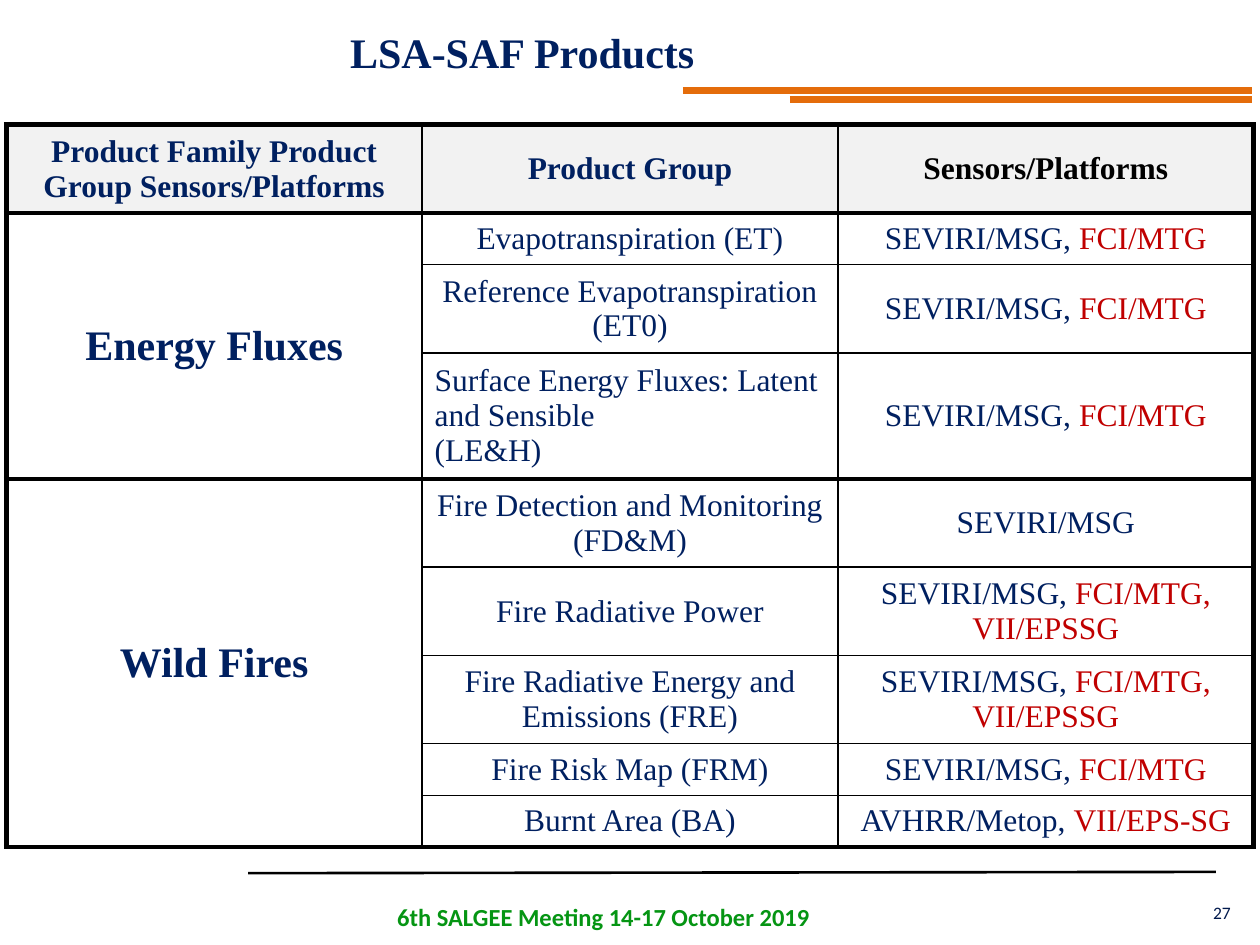
"""Build the LSA-SAF products slide with its product table."""
from lxml import etree
from pptx import Presentation
from pptx.dml.color import RGBColor
from pptx.enum.shapes import MSO_CONNECTOR
from pptx.enum.text import MSO_ANCHOR, PP_ALIGN
from pptx.oxml.ns import qn
from pptx.util import Inches, Pt

LEFT, CENTER = PP_ALIGN.LEFT, PP_ALIGN.CENTER
MIDDLE, TOP = MSO_ANCHOR.MIDDLE, MSO_ANCHOR.TOP
STRAIGHT = MSO_CONNECTOR.STRAIGHT

NAVY = RGBColor(0x00, 0x20, 0x60)
INK = RGBColor(0x00, 0x19, 0x4C)
RED = RGBColor(0xC0, 0x00, 0x00)
GREEN = RGBColor(0x05, 0x95, 0x13)
ORANGE = RGBColor(0xE4, 0x6C, 0x0A)
BLACK = RGBColor(0x00, 0x00, 0x00)
WHITE = RGBColor(0xFF, 0xFF, 0xFF)
GREY = RGBColor(0xF2, 0xF2, 0xF2)

SERIF, SANS = "Times New Roman", "Calibri"
BODY = {"name": SERIF, "size": Pt(18), "bold": False}
HEAD = {**BODY, "bold": True}
BIG = {**HEAD, "size": Pt(24)}
FOOTER = {"name": SANS, "size": Pt(14), "bold": True}
NUMBER = {"name": SANS, "size": Pt(10), "bold": False}

HEADERS = [
    ("Product Family Product Group Sensors/Platforms", NAVY),
    ("Product Group", NAVY),
    ("Sensors/Platforms", BLACK),
]
FAMILIES = {
    "Energy Fluxes": [
        (["Evapotranspiration (ET)"], "SEVIRI/MSG, ", "FCI/MTG"),
        (["Reference Evapotranspiration (ET0)"], "SEVIRI/MSG, ", "FCI/MTG"),
        (["Surface Energy Fluxes: Latent and Sensible", "(LE&H)"],
         "SEVIRI/MSG, ", "FCI/MTG"),
    ],
    "Wild Fires": [
        (["Fire Detection and Monitoring (FD&M)"], "SEVIRI/MSG", ""),
        (["Fire Radiative Power"], "SEVIRI/MSG, ", "FCI/MTG, VII/EPSSG"),
        (["Fire Radiative Energy and Emissions (FRE)"],
         "SEVIRI/MSG, ", "FCI/MTG, VII/EPSSG"),
        (["Fire Risk Map (FRM)"], "SEVIRI/MSG, ", "FCI/MTG"),
        (["Burnt Area (BA)"], "AVHRR/Metop, ", "VII/EPS-SG"),
    ],
}
ROW_HEIGHTS = [0.7, 0.41, 0.7, 1, 0.7, 0.7, 0.7, 0.41, 0.41]
COL_WIDTH = 3.3
THICK, THIN = 3, 1


def write(tf, paragraphs, style, align=CENTER):
    """Fill a text frame with paragraphs of (text, colour) runs."""
    for i, runs in enumerate(paragraphs):
        p = tf.add_paragraph() if i else tf.paragraphs[0]
        p.alignment = align
        for text, color in runs:
            r = p.add_run()
            r.text = text
            for key, value in style.items():
                setattr(r.font, key, value)
            r.font.color.rgb = color


def add_line(s, start, end, color, width):
    """Draw a straight line without a shadow."""
    sp = s.shapes.add_connector(STRAIGHT, *map(Inches, start + end))
    sp.line.color.rgb = color
    sp.line.width = Pt(width)
    etree.SubElement(sp._element.spPr, qn("a:effectLst"))


def add_text(s, box, text, style, color, align=CENTER, wrap=True):
    """Add a one-paragraph text box."""
    tf = s.shapes.add_textbox(*map(Inches, box)).text_frame
    tf.word_wrap = wrap
    write(tf, [[(text, color)]], style, align)


def set_title(s, box, text):
    """Place and format the title placeholder."""
    sp = s.shapes.title
    sp.left, sp.top, sp.width, sp.height = map(Inches, box)
    sp.text_frame.vertical_anchor = TOP
    write(sp.text_frame, [[(text, NAVY)]], BIG)


def set_borders(cell, widths):
    """Give a cell black left, right, top and bottom borders."""
    tcPr = cell._tc.get_or_add_tcPr()
    for i, (side, width) in enumerate(zip("LRTB", widths)):
        ln = etree.Element(qn(f"a:ln{side}"), w=str(Pt(width)))
        fill = etree.SubElement(ln, qn("a:solidFill"))
        etree.SubElement(fill, qn("a:srgbClr"), val=str(BLACK))
        tcPr.insert(i, ln)


def style_cells(table, starts):
    """Set fills and borders, thick around the table and each band."""
    last = len(table.columns) - 1
    for row in range(len(table.rows)):
        for col in range(last + 1):
            cell = table.cell(row, col)
            cell.vertical_anchor = MIDDLE
            cell.fill.solid()
            cell.fill.fore_color.rgb = WHITE if row else GREY
            edges = (col == 0, col == last,
                     col == 0 or row in starts, col == 0 or row + 1 in starts)
            set_borders(cell, [THICK if edge else THIN for edge in edges])


def add_products(s, left, top):
    """Add the table of product families, groups and sensors."""
    cols = len(HEADERS)
    table = s.shapes.add_table(
        len(ROW_HEIGHTS), cols, Inches(left), Inches(top),
        Inches(cols * COL_WIDTH), Inches(sum(ROW_HEIGHTS))).table
    for column in table.columns:
        column.width = Inches(COL_WIDTH)
    for row, height in zip(table.rows, ROW_HEIGHTS):
        row.height = Inches(height)
    for col, header in enumerate(HEADERS):
        write(table.cell(0, col).text_frame, [[header]], HEAD)
    row, starts = 1, [0, 1]
    for family, products in FAMILIES.items():
        cell = table.cell(row, 0)
        cell.merge(table.cell(row + len(products) - 1, 0))
        write(cell.text_frame, [[(family, NAVY)]], BIG)
        for group, current, planned in products:
            align = LEFT if len(group) > 1 else CENTER
            write(table.cell(row, 1).text_frame,
                  [[(text, NAVY)] for text in group], BODY, align)
            runs = [(current, NAVY)] + ([(planned, RED)] if planned else [])
            write(table.cell(row, 2).text_frame, [runs], BODY)
            row += 1
        starts.append(row)
    style_cells(table, starts)


def main():
    """Create the slide and save it."""
    prs = Presentation()
    prs.slide_width, prs.slide_height = Inches(10), Inches(7.5)
    s = prs.slides.add_slide(prs.slide_layouts[5])
    add_line(s, (6.27, 0.79), (9.94, 0.79), ORANGE, 4)
    add_line(s, (5.42, 0.72), (9.94, 0.72), ORANGE, 4)
    add_text(s, (2.83, 7.11, 3.92, 0.34),
             "6th SALGEE Meeting 14-17 October 2019", FOOTER, GREEN)
    add_text(s, (9.53, 7.11, 0.36, 0.27), "27", NUMBER, INK, LEFT, False)
    add_line(s, (1.97, 6.93), (9.65, 6.92), BLACK, 1.5)
    add_products(s, 0.05, 0.99)
    set_title(s, (-0.04, 0.16, 8.37, 0.51), "LSA-SAF Products")
    prs.save("out.pptx")


if __name__ == "__main__":
    main()
